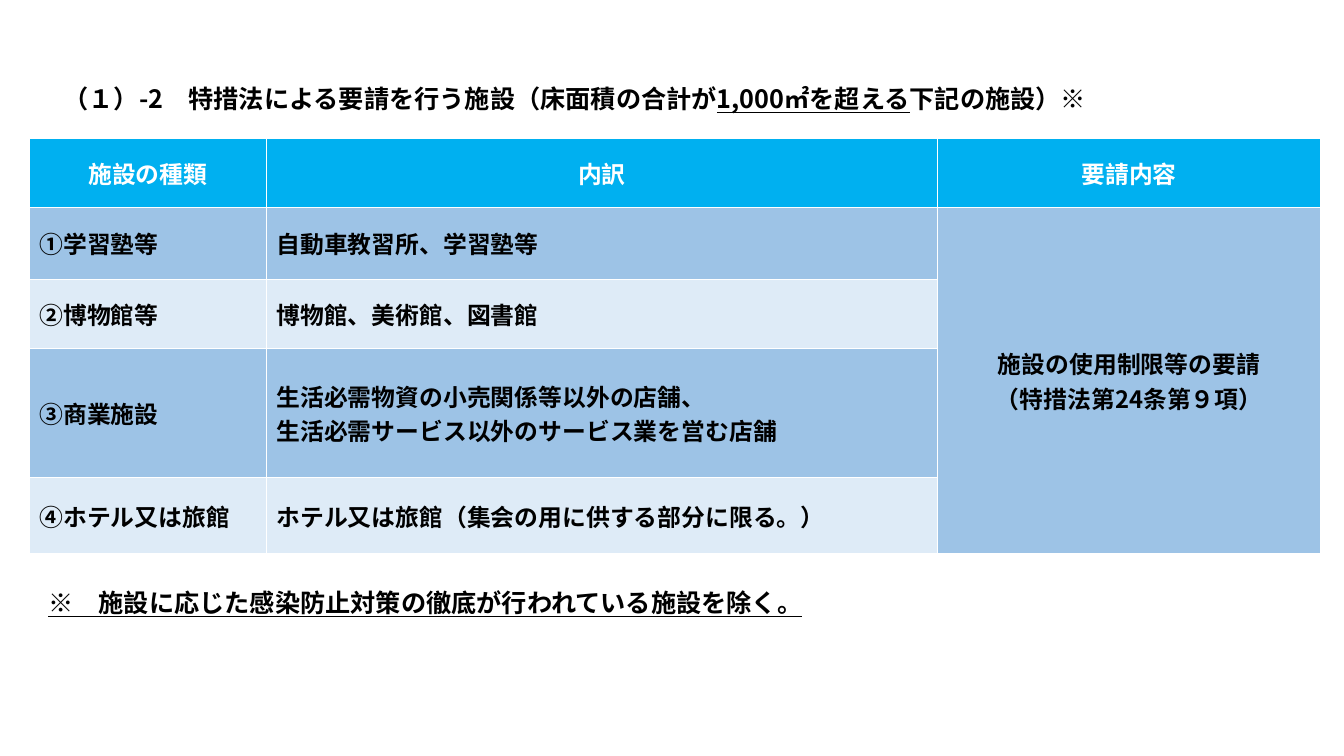
from lxml import etree
from pptx import Presentation
from pptx.dml.color import RGBColor
from pptx.enum.text import MSO_ANCHOR, MSO_AUTO_SIZE, PP_ALIGN
from pptx.oxml.ns import qn
from pptx.util import Cm, Pt

CENTER = PP_ALIGN.CENTER
LEFT = PP_ALIGN.LEFT
MIDDLE = MSO_ANCHOR.MIDDLE
FIT_SHAPE = MSO_AUTO_SIZE.SHAPE_TO_FIT_TEXT
FONT = "Noto Sans CJK JP"
BLACK = "000000"
WHITE = "FFFFFF"
HEADER_BLUE = "00B0F0"
BAND_BLUES = ("9DC3E6", "DEEBF7")

COLUMN_WIDTHS = (5.97, 16.92, 9.65)
ROW_HEIGHTS = (1.73, 1.83, 1.73, 3.25, 1.93)
HEADINGS = ("施設の種類", "内訳", "要請内容")
FACILITIES = (
    ("①学習塾等", "自動車教習所、学習塾等"),
    ("②博物館等", "博物館、美術館、図書館"),
    ("③商業施設", "生活必需物資の小売関係等以外の店舗、\n生活必需サービス以外のサービス業を営む店舗"),
    ("④ホテル又は旅館", "ホテル又は旅館（集会の用に供する部分に限る。）"),
)
REQUEST = "施設の使用制限等の要請\n（特措法第24条第９項）"


def color(hex_code):
    return RGBColor.from_string(hex_code)


def style_para(para, size, hex_code):
    """Set bold text in the same typeface for Latin and East Asian letters."""
    font = para.font
    font.name = FONT
    font.size = Pt(size)
    font.bold = True
    font.color.rgb = color(hex_code)
    latin = para._p.pPr.find(qn("a:defRPr")).find(qn("a:latin"))
    east_asian = etree.Element(qn("a:ea"), typeface=FONT)
    latin.addnext(east_asian)


def add_line(page, left, top, width, spans):
    """Add a one-line text box from (text, underlined) spans."""
    box = page.shapes.add_textbox(Cm(left), Cm(top), Cm(width), Cm(1.02))
    frame = box.text_frame
    frame.word_wrap = True
    frame.auto_size = FIT_SHAPE
    para = frame.paragraphs[0]
    style_para(para, 18, BLACK)
    for text, underlined in spans:
        span = para.add_run()
        span.text = text
        span.font.underline = underlined


def fill_cell(cell, text, fill, hex_code=BLACK, align=LEFT):
    cell.fill.solid()
    cell.fill.fore_color.rgb = color(fill)
    cell.vertical_anchor = MIDDLE
    cell.text = text
    for para in cell.text_frame.paragraphs:
        para.alignment = align
        style_para(para, 17, hex_code)


def add_facility_table(page):
    frame = page.shapes.add_table(
        len(ROW_HEIGHTS), len(COLUMN_WIDTHS), Cm(0.74), Cm(3.49),
        Cm(sum(COLUMN_WIDTHS)), Cm(sum(ROW_HEIGHTS)))
    table = frame.table
    for column, width in zip(table.columns, COLUMN_WIDTHS):
        column.width = Cm(width)
    for row, height in zip(table.rows, ROW_HEIGHTS):
        row.height = Cm(height)

    for column, heading in enumerate(HEADINGS):
        fill_cell(table.cell(0, column), heading, HEADER_BLUE, WHITE, CENTER)
    for row, facility in enumerate(FACILITIES, start=1):
        for column, text in enumerate(facility):
            fill_cell(table.cell(row, column), text, BAND_BLUES[(row - 1) % 2])
    request_cell = table.cell(1, 2)
    request_cell.merge(table.cell(len(FACILITIES), 2))
    fill_cell(request_cell, REQUEST, BAND_BLUES[0], align=CENTER)


def main():
    deck = Presentation()
    deck.slide_width = Cm(33.87)
    deck.slide_height = Cm(19.05)
    page = deck.slides.add_slide(deck.slide_layouts[6])
    add_line(page, 1.35, 1.98, 32.52, (
        ("（１）-2　特措法による要請を行う施設（床面積の合計が", False),
        ("1,000㎡を超える", True),
        ("下記の施設）※", False),
    ))
    add_line(page, 0.97, 14.68, 28.5, (
        ("※　施設に応じた感染防止対策の徹底が行われている施設を除く。", True),
    ))
    add_facility_table(page)
    deck.save("out.pptx")


if __name__ == "__main__":
    main()
